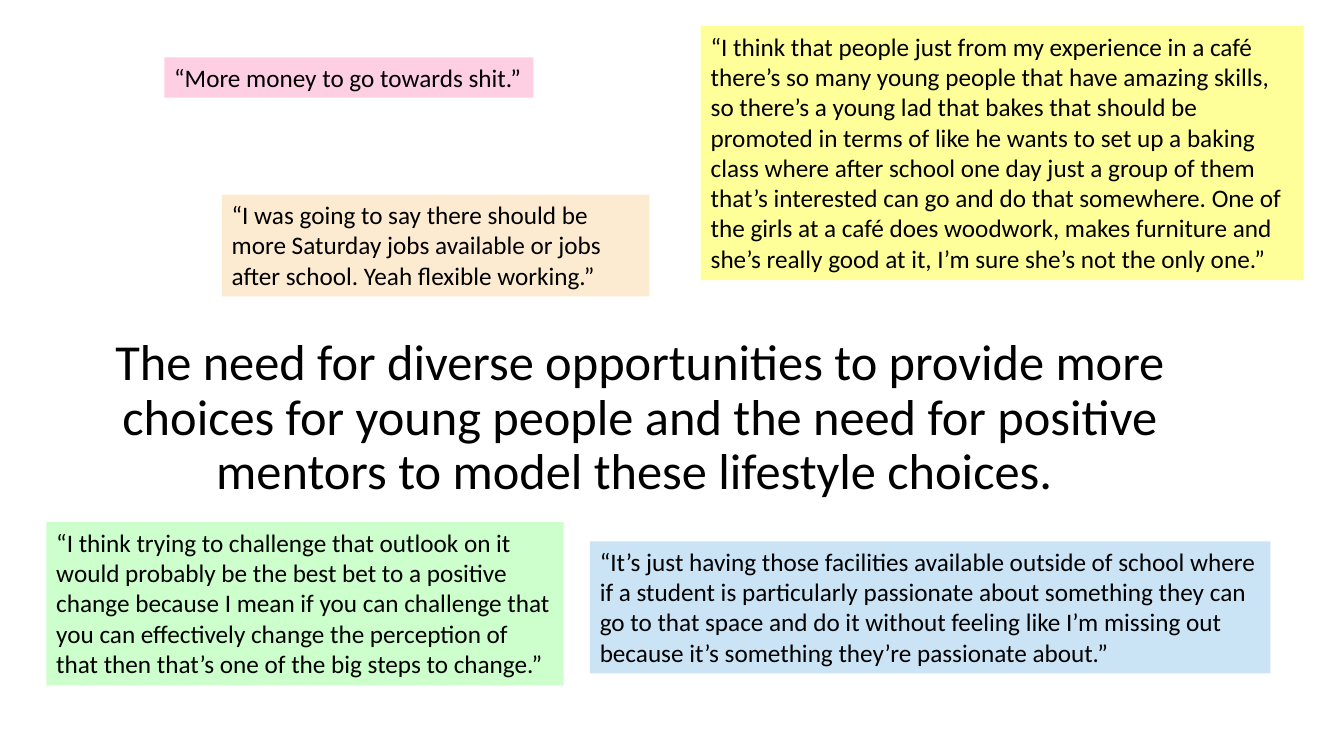
from dataclasses import dataclass

from pptx import Presentation
from pptx import util as u
from pptx.dml.color import RGBColor
from pptx.enum import shapes, text


@dataclass(frozen=True)
class Theme:
    font: str = "Calibri"
    ink: str = "000000"
    title: int = 36
    quote: int = 18
    pink: str = "FECEE3"
    peach: str = "FCEBD1"
    yellow: str = "FFFF99"
    blue: str = "CAE4F6"
    green: str = "CCFFCC"


theme = Theme()


def write(sp, words, size, align, anchor, spacing=1.0, fit=text.MSO_AUTO_SIZE.NONE):
    tf = sp.text_frame
    tf.word_wrap = True
    tf.auto_size = fit
    tf.vertical_anchor = anchor
    p = tf.paragraphs[0]
    p.alignment = align
    p.line_spacing = spacing
    r = p.add_run()
    r.text = words
    r.font.name = theme.font
    r.font.size = u.Pt(size)
    r.font.color.rgb = RGBColor.from_string(theme.ink)


prs = Presentation()
prs.slide_width = u.Inches(13.33)
prs.slide_height = u.Inches(7.5)
s = prs.slides.add_slide(prs.slide_layouts[5])

title = s.shapes.title
title.left, title.top, title.width, title.height = map(u.Inches, (0.6, 3.43, 11.5, 1.45))
write(
    title,
    "The need for diverse opportunities to provide more choices for young people "
    "and the need for positive mentors to model these lifestyle choices. ",
    size=theme.title,
    align=text.PP_ALIGN.CENTER,
    anchor=text.MSO_ANCHOR.MIDDLE,
    spacing=0.9,
)

quotes = [
    ((1.63, 0.57, 3.66, 0.4), theme.pink, "“More money to go towards shit.”"),
    (
        (2.2, 1.93, 4.24, 1.01),
        theme.peach,
        "“I was going to say there should be more Saturday jobs available or jobs "
        "after school. Yeah flexible working.”",
    ),
    (
        (6.95, 0.26, 5.98, 2.52),
        theme.yellow,
        "“I think that people just from my experience in a café there’s so many "
        "young people that have amazing skills, so there’s a young lad that bakes "
        "that should be promoted in terms of like he wants to set up a baking class "
        "where after school one day just a group of them that’s interested can go "
        "and do that somewhere. One of the girls at a café does woodwork, makes "
        "furniture and she’s really good at it, I’m sure she’s not the only one.”",
    ),
    (
        (5.85, 5.37, 6.75, 1.31),
        theme.blue,
        "“It’s just having those facilities available outside of school where if a "
        "student is particularly passionate about something they can go to that "
        "space and do it without feeling like I’m missing out because it’s something "
        "they’re passionate about.”",
    ),
    (
        (0.46, 5.18, 5.13, 1.62),
        theme.green,
        "“I think trying to challenge that outlook on it would probably be the best "
        "bet to a positive change because I mean if you can challenge that you can "
        "effectively change the perception of that then that’s one of the big steps "
        "to change.”",
    ),
]

for box, fill, words in quotes:
    sp = s.shapes.add_shape(shapes.MSO_SHAPE.RECTANGLE, *map(u.Inches, box))
    sp.shadow.inherit = False
    sp.fill.solid()
    sp.fill.fore_color.rgb = RGBColor.from_string(fill)
    sp.line.fill.background()
    write(
        sp,
        words,
        size=theme.quote,
        align=text.PP_ALIGN.LEFT,
        anchor=text.MSO_ANCHOR.TOP,
        fit=text.MSO_AUTO_SIZE.SHAPE_TO_FIT_TEXT,
    )

prs.save("out.pptx")
